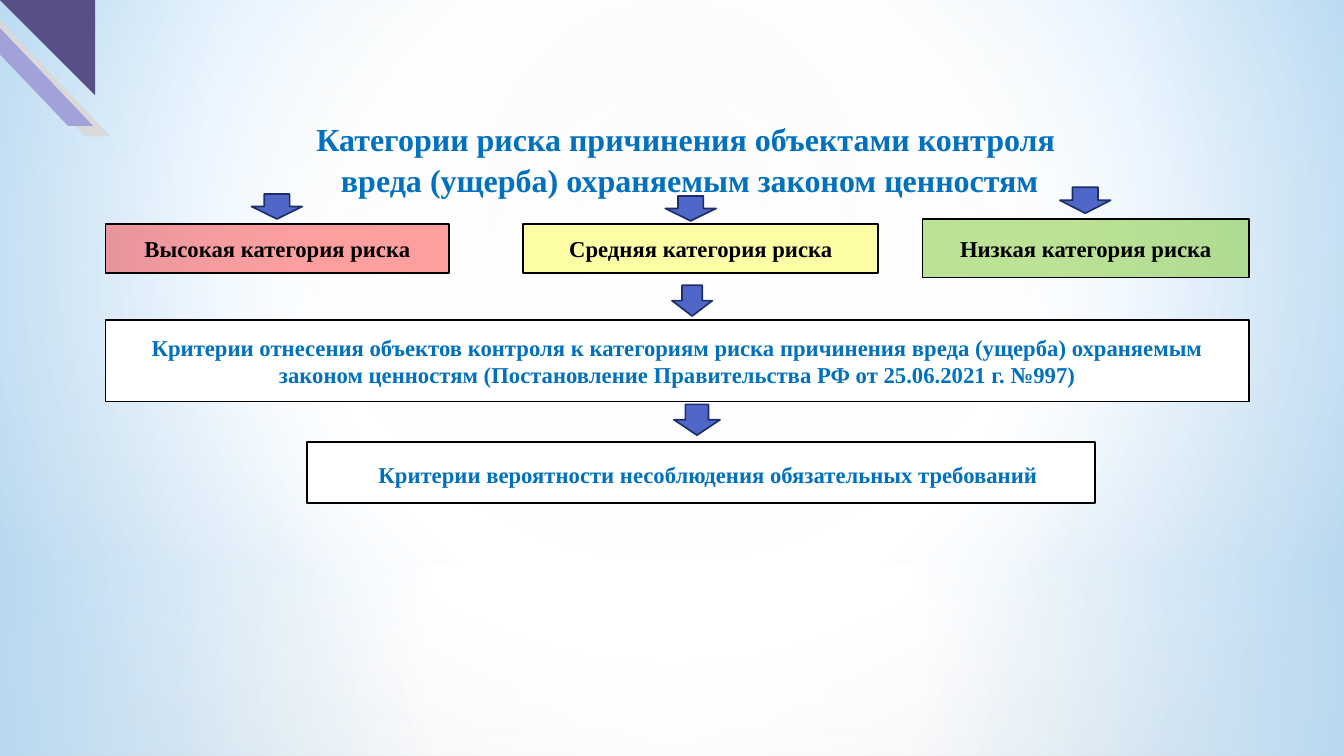
from dataclasses import dataclass
from typing import NamedTuple

from lxml import etree
from pptx import Presentation
from pptx.dml.color import RGBColor
from pptx.enum.shapes import MSO_SHAPE
from pptx.enum.text import MSO_ANCHOR, PP_ALIGN
from pptx.oxml.ns import qn
from pptx.util import Pt

RECTANGLE = MSO_SHAPE.RECTANGLE
ELLIPSE = MSO_SHAPE.OVAL
DOWN_ARROW = MSO_SHAPE.DOWN_ARROW
PARALLELOGRAM = MSO_SHAPE.PARALLELOGRAM
RIGHT_TRIANGLE = MSO_SHAPE.RIGHT_TRIANGLE
CENTER = PP_ALIGN.CENTER
MIDDLE = MSO_ANCHOR.MIDDLE
TOP = MSO_ANCHOR.TOP


@dataclass(frozen=True)
class Theme:
    font: str = "Times New Roman"
    title_size: float = 24
    label_size: float = 17
    line_width: float = 1.25
    blue_text: str = "0070C0"
    black: str = "000000"
    white: str = "FFFFFF"
    sky: str = "B4DCFA"
    arrow_fill: str = "4E67C8"
    arrow_line: str = "1F2E69"
    high: str = "FF0000"
    medium: str = "FFFF00"
    low: str = "92D050"
    corner_grey: str = "D9D9D9"
    corner_lilac: str = "A2A2DA"
    corner_violet: str = "565087"


THEME = Theme()
WIDTH, HEIGHT = 1008, 566.64
HORIZON = 421.92


class Area(NamedTuple):
    left: float
    top: float
    width: float
    height: float


class Stop(NamedTuple):
    position: int
    color: str
    alpha: int = 100


@dataclass(frozen=True)
class Gradient:
    stops: tuple[Stop, ...]
    focus: tuple[int, int, int, int] | None = (50, 50, 50, 50)  # None: top to bottom


@dataclass(frozen=True)
class Glow:
    kind: MSO_SHAPE
    area: Area
    gradient: Gradient


@dataclass(frozen=True)
class Label:
    text: str
    area: Area
    fill: str = THEME.white
    opacity: int = 100
    color: str = THEME.blue_text
    indent: float = 0
    drop: float = 0


@dataclass(frozen=True)
class Corner:
    kind: MSO_SHAPE
    area: Area
    color: str
    flips: tuple[str, ...]
    slant: float | None = None


# Contents
BACKDROP = Gradient((Stop(0, "F4F4F4"), Stop(60, THEME.white), Stop(100, "CCCCCC")), (20, 10, 20, 60))
GLOWS = (
    Glow(RECTANGLE, Area(0, HORIZON, WIDTH, HEIGHT - HORIZON), Gradient(
        (Stop(0, THEME.white, 91), Stop(37, THEME.white, 76), Stop(100, THEME.sky, 79)))),
    Glow(RECTANGLE, Area(0, 0, WIDTH, HORIZON), Gradient(
        (Stop(0, THEME.white, 89), Stop(48, THEME.white, 62), Stop(100, THEME.sky, 79)))),
    Glow(RECTANGLE, Area(0, 311.76, WIDTH, 188.64), Gradient(
        (Stop(0, THEME.white, 0), Stop(29, THEME.white, 30), Stop(45, THEME.sky, 40),
         Stop(55, THEME.white, 26), Stop(65, THEME.sky, 60), Stop(100, THEME.white, 0)), None)),
    Glow(ELLIPSE, Area(0, 132.48, WIDTH, HORIZON), Gradient(
        (Stop(0, THEME.white), Stop(56, THEME.white, 0)))),
)
CORNERS = (
    Corner(PARALLELOGRAM, Area(-25.92, 7.92, 108.72, 94.32), THEME.corner_grey, ("flipH",), 0.953),
    Corner(PARALLELOGRAM, Area(-38.88, 0, 108.72, 94.32), THEME.corner_lilac, ("flipH",), 0.953),
    Corner(RIGHT_TRIANGLE, Area(0, 0, 71.28, 71.28), THEME.corner_violet, ("flipH", "flipV")),
)
TITLE_LINES = (
    "Категории риска причинения объектами контроля ",
    "вреда (ущерба) охраняемым законом ценностям",
)
LABELS = (
    Label("Высокая категория риска", Area(79.2, 167.76, 257.76, 36.72), THEME.high, 37, THEME.black),
    Label("Средняя категория риска", Area(392.4, 167.76, 266.4, 36.72), THEME.medium, 34, THEME.black),
    Label("Низкая категория риска", Area(691.92, 164.16, 244.8, 43.92), THEME.low, 60, THEME.black),
    Label("Критерии отнесения объектов контроля к категориям риска причинения вреда (ущерба) "
          "охраняемым законом ценностям (Постановление Правительства РФ от 25.06.2021 г. №997)",
          Area(79.2, 239.76, 857.52, 61.2)),
    Label("Критерии вероятности несоблюдения обязательных требований",
          Area(230.4, 331.2, 591.12, 46.08), indent=10, drop=3),
)
ARROWS = (
    Area(188.64, 145.44, 38.16, 18.72),
    Area(498.96, 146.88, 38.16, 18.72),
    Area(794.88, 140.4, 38.16, 19.44),
    Area(504, 213.84, 30.24, 23.04),
    Area(505.44, 303.12, 34.56, 23.04),
)


def set_alpha(color_element, percent: int) -> None:
    etree.SubElement(color_element, qn("a:alpha")).set("val", str(percent * 1000))


def set_gradient(holder, gradient: Gradient) -> None:
    """Replace the solid fill inside holder by a gradient."""
    fill = etree.Element(qn("a:gradFill"), rotWithShape="1")
    stop_list = etree.SubElement(fill, qn("a:gsLst"))
    for stop in gradient.stops:
        entry = etree.SubElement(stop_list, qn("a:gs"), pos=str(stop.position * 1000))
        color = etree.SubElement(entry, qn("a:srgbClr"), val=stop.color)
        if stop.alpha < 100:
            set_alpha(color, stop.alpha)
    if gradient.focus is None:
        etree.SubElement(fill, qn("a:lin"), ang="5400000", scaled="0")
    else:
        circle = etree.SubElement(fill, qn("a:path"), path="circle")
        edges = {side: str(part * 1000) for side, part in zip("ltrb", gradient.focus)}
        etree.SubElement(circle, qn("a:fillToRect"), edges)
    holder.replace(holder.find(qn("a:solidFill")), fill)


def add_shape(page, kind: MSO_SHAPE, area: Area, fill: str, line: str | None = None):
    shape = page.shapes.add_shape(kind, *map(Pt, area))
    shape.shadow.inherit = False
    shape.fill.solid()
    shape.fill.fore_color.rgb = RGBColor.from_string(fill)
    if line is None:
        shape.line.fill.background()
    else:
        shape.line.color.rgb = RGBColor.from_string(line)
        shape.line.width = Pt(THEME.line_width)
    return shape


def write_text(box, lines: tuple[str, ...], size: float, color: str, anchor: MSO_ANCHOR,
               spacing: float = 1.0) -> None:
    frame = box.text_frame
    frame.word_wrap = True
    frame.vertical_anchor = anchor
    frame.text = "\n".join(lines)
    for para in frame.paragraphs:
        para.alignment = CENTER
        para.line_spacing = spacing
        for span in para.runs:
            span.font.name = THEME.font
            span.font.size = Pt(size)
            span.font.bold = True
            span.font.color.rgb = RGBColor.from_string(color)


def add_corner(page, corner: Corner) -> None:
    shape = add_shape(page, corner.kind, corner.area, corner.color)
    if corner.slant is not None:
        shape.adjustments[0] = corner.slant
    for flip in corner.flips:
        shape.element.spPr.find(qn("a:xfrm")).set(flip, "1")


def add_label(page, label: Label) -> None:
    box = add_shape(page, RECTANGLE, label.area, label.fill, THEME.black)
    if label.opacity < 100:
        set_alpha(box.element.spPr.find(qn("a:solidFill"))[0], label.opacity)
    box.text_frame.margin_left = Pt(7.2 + label.indent)
    box.text_frame.margin_top = Pt(3.6 + label.drop)
    write_text(box, (label.text,), THEME.label_size, label.color, MIDDLE)


def main() -> None:
    deck = Presentation()
    deck.slide_width, deck.slide_height = Pt(WIDTH), Pt(HEIGHT)
    page = deck.slides.add_slide(deck.slide_layouts[6])

    # Background and corner ornament
    page.background.fill.solid()
    page.background.fill.fore_color.rgb = RGBColor.from_string(THEME.white)
    set_gradient(page.element.find(".//" + qn("p:bgPr")), BACKDROP)
    for glow in GLOWS:
        shape = add_shape(page, glow.kind, glow.area, THEME.white)
        set_gradient(shape.element.spPr, glow.gradient)
    for corner in CORNERS:
        add_corner(page, corner)

    # Title
    title = page.shapes.add_textbox(Pt(44.64), Pt(84.2), Pt(945.36), Pt(66))
    write_text(title, TITLE_LINES, THEME.title_size, THEME.blue_text, TOP, 1.07)

    # Risk categories, criteria and arrows
    for label in LABELS:
        add_label(page, label)
    for area in ARROWS:
        add_shape(page, DOWN_ARROW, area, THEME.arrow_fill, THEME.arrow_line)

    deck.save("out.pptx")


if __name__ == "__main__":
    main()
